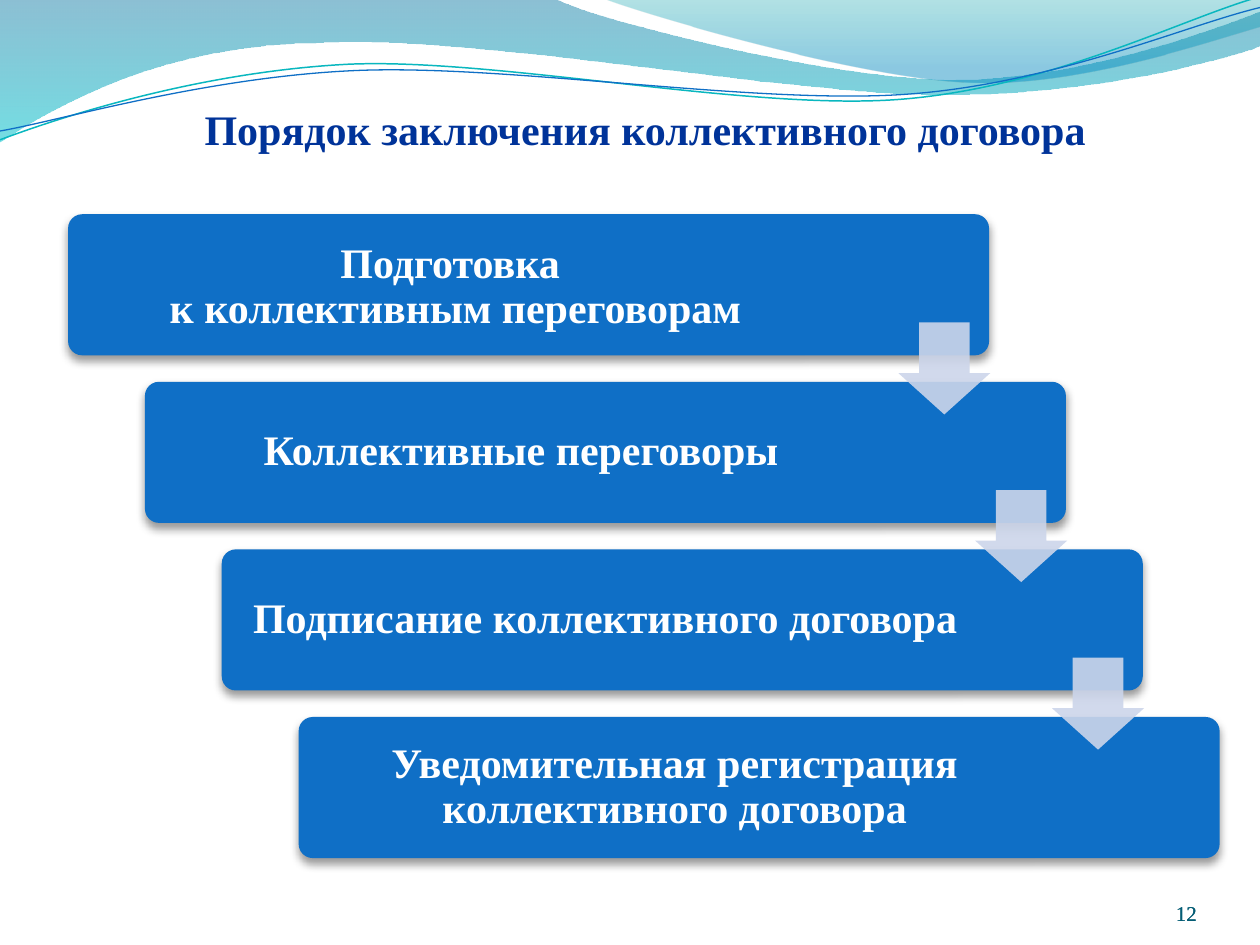
"""Build the slide on the steps of concluding a collective agreement."""
from dataclasses import dataclass

import pptx
import pptx.dml.color
import pptx.enum.shapes
import pptx.enum.text
import pptx.oxml
import pptx.oxml.ns
import pptx.util

Inches, Pt = pptx.util.Inches, pptx.util.Pt
qn = pptx.oxml.ns.qn
ALIGN = pptx.enum.text.PP_ALIGN
ANCHOR = pptx.enum.text.MSO_ANCHOR
SHAPE = pptx.enum.shapes.MSO_SHAPE
FONT, BLUE, WHITE = "Times New Roman", "0F6FC6", "FFFFFF"


@dataclass
class Wave:
    start: tuple
    segments: list
    stops: tuple = ()
    line: str = ""
    width: float = 0


@dataclass
class Step:
    lines: list
    align: ALIGN = ALIGN.CENTER
    right_inset: float = 1.44


WAVES = [
    Wave((0, 0), [(4.4, -0.01),
                  (4.76, 0.17, 6.63, 0.63, 7.58, 0.63),
                  (8.53, 0.63, 9.58, 0.26, 10, 0.09),
                  (10.01, 0.36),
                  (9.83, 0.44, 8.7, 0.76, 7.46, 0.75),
                  (6.22, 0.75, 3.82, 0.28, 2.57, 0.34),
                  (1.29, 0.35, 0.46, 0.83, -0.01, 1.13)],
         stops=((0, "0074A0", 45), (1, "00C4CD", 55))),
    Wave((4.79, -0.01), [(5.09, 0.11, 6.82, 0.62, 7.69, 0.65),
                         (8.55, 0.69, 9.61, 0.32, 10, 0.21),
                         (10, 0)],
         stops=((0, "00A0A8", 30), (0.8, "008ABF", 45))),
    Wave((0, 1.11), [(0.48, 0.93, 1.58, 0.57, 2.77, 0.51),
                     (3.95, 0.46, 5.93, 0.88, 7.13, 0.79),
                     (8.33, 0.7, 9.38, 0.15, 9.98, -0.02)],
         line="09B7BF", width=0.85),
    Wave((0, 1.04), [(0.47, 0.96, 1.64, 0.61, 2.83, 0.56),
                     (4.03, 0.51, 5.97, 0.83, 7.17, 0.75),
                     (8.36, 0.67, 9.41, 0.2, 10, 0.06)],
         line=BLUE, width=0.75),
]
STEPS = [
    Step(["Подготовка ", "к коллективным переговорам"], right_inset=1.26),
    Step(["Коллективные переговоры"]),
    Step(["Подписание коллективного договора"], ALIGN.RIGHT),
    Step(["Уведомительная регистрация коллективного договора"]),
]
STEP_X, STEP_Y, STEP_W, STEP_H = 0.54, 1.7, 7.31, 1.12
SHIFT_X, SHIFT_Y = 0.61, 1.33
ARROW_X, ARROW_Y, ARROW_SIZE = 7.13, 2.56, 0.73
NUMBER_RIGHT, NUMBER_WIDTHS = 9.5, (0.83, 2.33)


def rgb(value: str) -> pptx.dml.color.RGBColor:
    """Turn a hex string into a colour."""
    return pptx.dml.color.RGBColor.from_string(value)


def set_alpha(color, percent: int) -> None:
    """Set the opacity of one srgbClr element."""
    color.append(color.makeelement(qn("a:alpha"), {"val": str(percent * 1000)}))


def bend(sp, segments: list) -> None:
    """Replace straight parts of a freeform by its cubic curves."""
    parts = list(sp.element.spPr.iter(qn("a:lnTo")))
    for part, seg in zip(parts, segments):
        if len(seg) == 2:
            continue
        curve = part.makeelement(qn("a:cubicBezTo"), {})
        for x, y in zip(seg[::2], seg[1::2]):
            local = {"x": str(Inches(x) - sp.left), "y": str(Inches(y) - sp.top)}
            curve.append(part.makeelement(qn("a:pt"), local))
        part.getparent().replace(part, curve)


def add_wave(s, wave: Wave) -> None:
    """Draw a gradient band or a thin curve."""
    anchors = [(Inches(x), Inches(y))
               for x, y in [wave.start] + [seg[-2:] for seg in wave.segments]]
    builder = s.shapes.build_freeform(*anchors[0])
    builder.add_line_segments(anchors[1:], close=bool(wave.stops))
    sp = builder.convert_to_shape()
    bend(sp, wave.segments)
    sp.shadow.inherit = False
    if wave.line:
        sp.fill.background()
        sp.line.color.rgb = rgb(wave.line)
        sp.line.width = Pt(wave.width)
        return
    sp.line.fill.background()
    sp.fill.gradient()
    sp.fill.gradient_angle = 270
    for stop, (position, color, _) in zip(sp.fill.gradient_stops, wave.stops):
        stop.position = position
        stop.color.rgb = rgb(color)
    colors = list(sp.element.spPr.iter(qn("a:srgbClr")))
    for color, (_, _, percent) in zip(colors, wave.stops):
        set_alpha(color, percent)


def write(sp, lines: list, size: int, color: str, bold: bool, align: ALIGN,
          anchor: ANCHOR, insets: tuple) -> None:
    """Fill a text frame with one paragraph per line."""
    tf = sp.text_frame
    tf.word_wrap = True
    tf.auto_size = pptx.enum.text.MSO_AUTO_SIZE.NONE
    tf.vertical_anchor = anchor
    tf.margin_left, tf.margin_top, tf.margin_right, tf.margin_bottom = map(Inches, insets)
    for i, line in enumerate(lines):
        p = tf.paragraphs[0] if i == 0 else tf.add_paragraph()
        p.alignment = align
        r = p.add_run()
        r.text = line
        r.font.name, r.font.size, r.font.bold = FONT, Pt(size), bold
        r.font.color.rgb = rgb(color)


def add_block(s, kind: SHAPE, box: tuple, color: str, adjustments: tuple):
    """Add a plain filled preset shape."""
    sp = s.shapes.add_shape(kind, *map(Inches, box))
    for i, value in enumerate(adjustments):
        sp.adjustments[i] = value
    sp.shadow.inherit = False
    sp.fill.solid()
    sp.fill.fore_color.rgb = rgb(color)
    sp.line.fill.background()
    return sp


def add_step(s, index: int, step: Step) -> None:
    """Draw one card of the staircase with its shadow."""
    box = (STEP_X + index * SHIFT_X, STEP_Y + index * SHIFT_Y, STEP_W, STEP_H)
    sp = add_block(s, SHAPE.ROUNDED_RECTANGLE, box, BLUE, (0.1,))
    effects = sp.element.spPr.find(qn("a:effectLst"))
    effects.append(pptx.oxml.parse_xml(
        f'<a:outerShdw {pptx.oxml.ns.nsdecls("a")} blurRad="{Pt(5.2)}" dist="{Pt(3)}" '
        'dir="5400000" rotWithShape="0"><a:srgbClr val="000000">'
        '<a:alpha val="40000"/></a:srgbClr></a:outerShdw>'))
    write(sp, step.lines, 24, WHITE, True, step.align, ANCHOR.MIDDLE,
          (0.1, 0.1, step.right_inset, 0.1))
    last = sp.text_frame.paragraphs[-1]
    last.line_spacing, last.space_after = 0.9, Pt(8.4)


def add_arrow(s, index: int) -> None:
    """Draw the arrow from one card to the next."""
    box = (ARROW_X + index * SHIFT_X, ARROW_Y + index * SHIFT_Y, ARROW_SIZE, ARROW_SIZE)
    sp = add_block(s, SHAPE.DOWN_ARROW, box, "CCD5EA", (0.55, 0.45))
    set_alpha(sp.element.spPr.find(".//" + qn("a:srgbClr")), 90)


def add_number(s, width: float) -> None:
    """Write the slide number against its right edge."""
    sp = s.shapes.add_textbox(*map(Inches, (NUMBER_RIGHT - width, 6.95, width, 0.4)))
    write(sp, ["12"], 12, "045D75", False, ALIGN.RIGHT, ANCHOR.BOTTOM, (0, 0, 0, 0))


def main() -> None:
    """Assemble and save the slide."""
    prs = pptx.Presentation()
    prs.slide_width, prs.slide_height = Inches(10), Inches(7.5)
    s = prs.slides.add_slide(prs.slide_layouts.get_by_name("Title Only"))
    for wave in WAVES:
        add_wave(s, wave)
    title = s.shapes.title
    title.element.getparent().append(title.element)
    title.left, title.top, title.width, title.height = map(Inches, (0.12, 0.6, 10, 0.62))
    write(title, ["Порядок заключения коллективного договора"], 24, "003399", True,
          ALIGN.CENTER, ANCHOR.BOTTOM, (0, 0.05, 0, 0))
    for width in NUMBER_WIDTHS:
        add_number(s, width)
    for index, step in enumerate(STEPS):
        add_step(s, index, step)
    for index in range(len(STEPS) - 1):
        add_arrow(s, index)
    prs.save("out.pptx")


if __name__ == "__main__":
    main()
